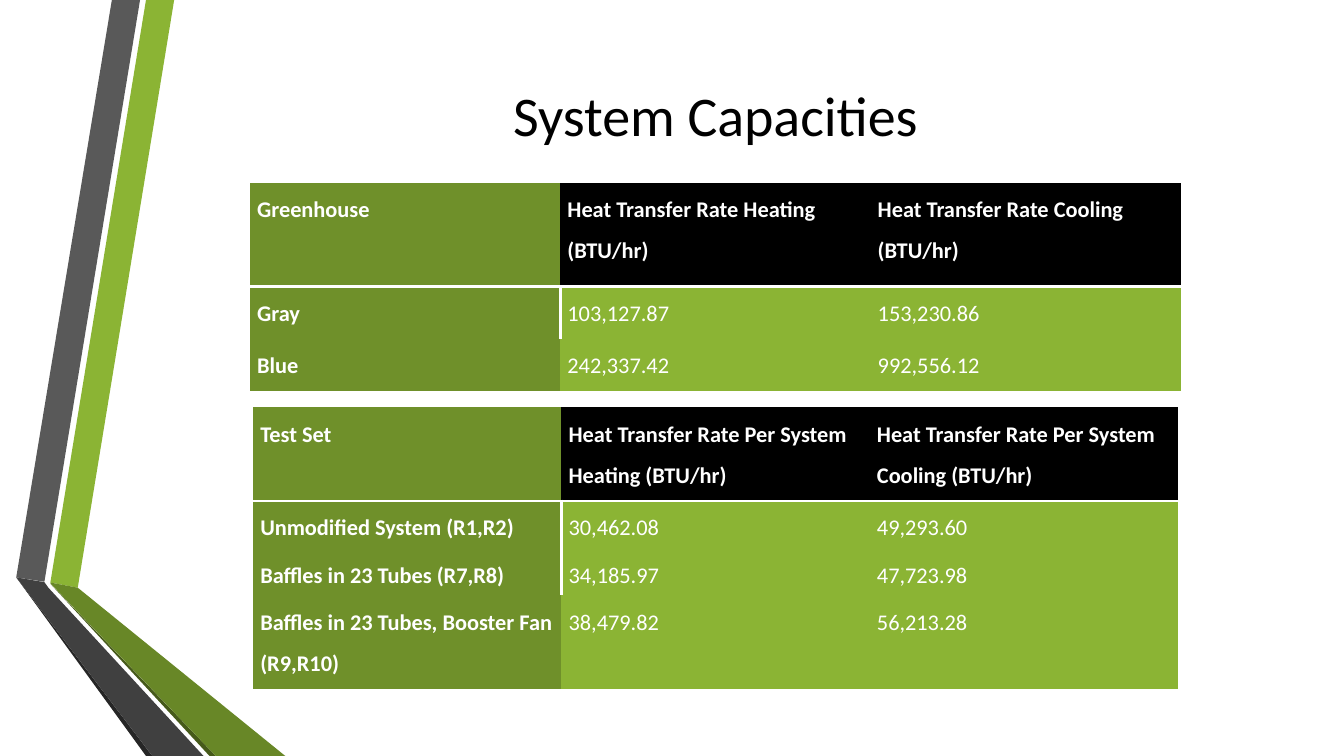
"""Build the System Capacities slide: folded ribbons, a title and two capacity tables."""
from lxml.etree import SubElement
from pptx import Presentation
from pptx.dml.color import RGBColor
from pptx.enum.text import MSO_ANCHOR as Anchor, PP_ALIGN as Align
from pptx.oxml.ns import qn
from pptx.util import Cm, Pt

COLORS = {
    "lime": "8BB434", "olive": "6F902A", "moss": "688727", "deep moss": "465A1A",
    "gray": "595959", "dark gray": "404040", "charcoal": "262626",
    "black": "000000", "white": "FFFFFF",
}
NO_STYLE_NO_GRID = "{2D5ABB26-0587-4C30-8999-92F81FD0307C}"


def write(paragraph, text, size, color, bold=False):
    run = paragraph.add_run()
    run.text = text
    run.font.color.rgb = RGBColor.from_string(COLORS[color])
    for name, value in {"name": "Calibri", "size": Pt(size), "bold": bold}.items():
        setattr(run.font, name, value)


def add_white_border(cell, side):
    properties = cell._tc.get_or_add_tcPr()
    border = properties.makeelement(qn(f"a:{side}"), {"w": str(Pt(2))})
    fill = SubElement(border, qn("a:solidFill"))
    SubElement(fill, qn("a:srgbClr"), val=COLORS["white"])
    properties.insert(0, border)


deck = Presentation()
deck.slide_width, deck.slide_height = Cm(33.87), Cm(19.05)
slide = deck.slides.add_slide(deck.slide_layouts[6])

ribbons = [
    ("lime", [(127, 1468), (196, 1481), (439, 0), (368, 0)]),
    ("gray", [(353, 0), (282, 0), (41, 1455), (112, 1466)]),
    ("charcoal", [(41, 1455), (368, 1905), (384, 1905)]),
    ("deep moss", [(127, 1471), (528, 1905), (544, 1905)]),
    ("moss", [(127, 1470), (544, 1905), (719, 1905), (196, 1481), (127, 1468)]),
    ("dark gray", [(513, 1905), (122, 1481), (112, 1467), (41, 1455), (384, 1905)]),
]
for color, corners in ribbons:
    outline = slide.shapes.build_freeform(*corners[0], scale=Cm(0.01))
    outline.add_line_segments(corners[1:], close=True)
    ribbon = outline.convert_to_shape()
    ribbon.shadow.inherit = False
    ribbon.fill.solid()
    ribbon.fill.fore_color.rgb = RGBColor.from_string(COLORS[color])
    ribbon.line.fill.background()

title = slide.shapes.add_textbox(Cm(4.11), Cm(1.9), Cm(27.84), Cm(4.88)).text_frame
title.word_wrap = True
title.vertical_anchor = Anchor.TOP
title.paragraphs[0].alignment = Align.CENTER
write(title.paragraphs[0], "System Capacities", 40, "black")

capacities = [
    {
        "left": 6.38, "top": 10.26, "column": 7.77, "heights": [2.36, 1.19, 1.19, 2.36],
        "rows": [
            ("Test Set", "Heat Transfer Rate Per System Heating (BTU/hr)",
             "Heat Transfer Rate Per System Cooling (BTU/hr)"),
            ("Unmodified System (R1,R2)", "30,462.08", "49,293.60"),
            ("Baffles in 23 Tubes (R7,R8)", "34,185.97", "47,723.98"),
            ("Baffles in 23 Tubes, Booster Fan (R9,R10)", "38,479.82", "56,213.28"),
        ],
    },
    {
        "left": 6.3, "top": 4.6, "column": 7.82, "heights": [2.62, 1.31, 1.31],
        "rows": [
            ("Greenhouse", "Heat Transfer Rate Heating (BTU/hr)",
             "Heat Transfer Rate Cooling (BTU/hr)"),
            ("Gray", "103,127.87", "153,230.86"),
            ("Blue", "242,337.42", "992,556.12"),
        ],
    },
]
cell_format = {
    "margin_left": Cm(0.18), "margin_right": Cm(0.18),
    "margin_top": 0, "margin_bottom": 0, "vertical_anchor": Anchor.TOP,
}
for capacity in capacities:
    rows, heights = capacity["rows"], capacity["heights"]
    frame = slide.shapes.add_table(
        len(rows), 3, Cm(capacity["left"]), Cm(capacity["top"]),
        Cm(3 * capacity["column"]), Cm(sum(heights)))
    frame.element.xpath(".//a:tableStyleId")[0].text = NO_STYLE_NO_GRID
    table = frame.table
    for column in table.columns:
        column.width = Cm(capacity["column"])
    for r, (texts, height) in enumerate(zip(rows, heights)):
        table.rows[r].height = Cm(height)
        for c, text in enumerate(texts):
            cell = table.cell(r, c)
            for name, value in cell_format.items():
                setattr(cell, name, value)
            color = "olive" if c == 0 else "black" if r == 0 else "lime"
            cell.fill.solid()
            cell.fill.fore_color.rgb = RGBColor.from_string(COLORS[color])
            if r == 0:
                add_white_border(cell, "lnB")
            elif c == 0 and r < len(rows) - 1:
                add_white_border(cell, "lnR")
            paragraph = cell.text_frame.paragraphs[0]
            paragraph.line_spacing = 1.5
            write(paragraph, text, 16, "white", bold=r == 0 or c == 0)

deck.save("out.pptx")
